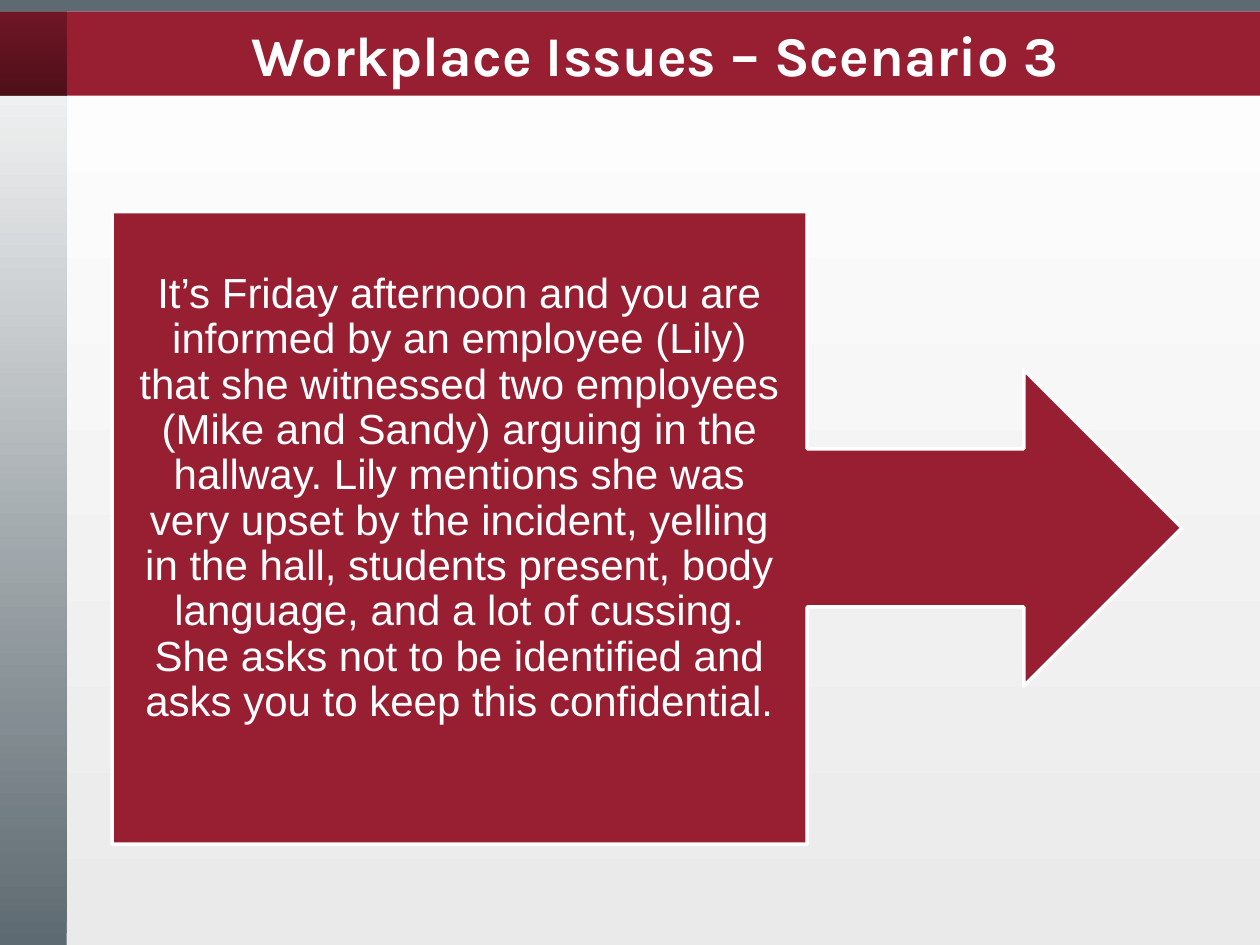
from lxml.etree import SubElement
from pptx import Presentation
from pptx.dml.color import RGBColor as Rgb
from pptx.enum.shapes import MSO_SHAPE as Kind
from pptx.enum.text import MSO_ANCHOR as Anchor, PP_ALIGN as Align
from pptx.oxml.ns import qn
from pptx.util import Inches, Pt

COLORS = {"red": "981E32", "slate": "5E6A71", "white": "FFFFFF",
          "mist": "EAEAEA", "black": "000000"}
TITLE = "Workplace Issues – Scenario 3"
STORY = (
    "It’s Friday afternoon and you are informed by an employee (Lily) that "
    "she witnessed two employees (Mike and Sandy) arguing in the hallway. "
    "Lily mentions she was very upset by the incident, yelling in the hall, "
    "students present, body language, and a lot of cussing. She asks not to "
    "be identified and asks you to keep this confidential."
)


def color(name):
    return Rgb.from_string(COLORS[name])


def fade(fill, names, alphas=()):
    """Blend from the first colour at the bottom to the last at the top."""
    fill.gradient()
    fill.gradient_angle = 90
    for stop, name in zip(fill.gradient_stops, names):
        stop.color.rgb = color(name)
    tags = fill._xPr.iter(qn("a:srgbClr"))
    for tag, alpha in zip(tags, alphas):
        SubElement(tag, qn("a:alpha"), val=str(alpha * 1000))


class Deck:
    def __init__(self, slide):
        self.slide = slide

    def shape(self, kind, box, fill=None, edge=None):
        item = self.slide.shapes.add_shape(kind, *map(Inches, box))
        item.shadow.inherit = False
        if fill:
            item.fill.solid()
            item.fill.fore_color.rgb = color(fill)
        if edge:
            item.line.color.rgb = color(edge)
            item.line.width = Pt(2)
        else:
            item.line.fill.background()
        return item

    def text(self, box, words, pads, style):
        """Add centred white text; pads are left, top, right, bottom."""
        frame = self.slide.shapes.add_textbox(*map(Inches, box)).text_frame
        frame.word_wrap = True
        frame.vertical_anchor = Anchor.MIDDLE
        for side, pad in zip(("left", "top", "right", "bottom"), pads):
            setattr(frame, f"margin_{side}", Inches(pad))
        para = frame.paragraphs[0]
        para.alignment = Align.CENTER
        para.line_spacing = 0.9
        run = para.add_run()
        run.text = words
        run.font.color.rgb = color("white")
        for key, value in style.items():
            setattr(run.font, key, value)


def main():
    show = Presentation()
    show.slide_width, show.slide_height = Inches(10), Inches(7.5)
    slide = show.slides.add_slide(show.slide_layouts[6])
    fade(slide.background.fill, ("mist", "white"))
    deck = Deck(slide)

    side = deck.shape(Kind.RECTANGLE, (0, 0, 0.53, 7.5))
    fade(side.fill, ("slate", "white"))
    deck.shape(Kind.RECTANGLE, (0, 0.09, 10, 0.67), "red")
    shade = deck.shape(Kind.RECTANGLE, (0, 0.09, 0.53, 0.67))
    fade(shade.fill, ("black", "black"), (50, 25))
    deck.shape(Kind.RECTANGLE, (0, 0, 10, 0.09), "slate")

    deck.shape(Kind.RIGHT_ARROW_CALLOUT, (0.89, 1.68, 8.49, 5.02),
               "red", "white")
    deck.text((0.89, 1.68, 5.51, 5.02), STORY, (0.19, 0.19, 0.19, 0.65),
              {"name": "Arial", "size": Pt(24)})
    deck.text((0.53, 0.17, 9.47, 0.59), TITLE, (0.1, 0.05, 0.23, 0.05),
              {"name": "Karla", "size": Pt(32), "bold": True})
    show.save("out.pptx")


if __name__ == "__main__":
    main()
